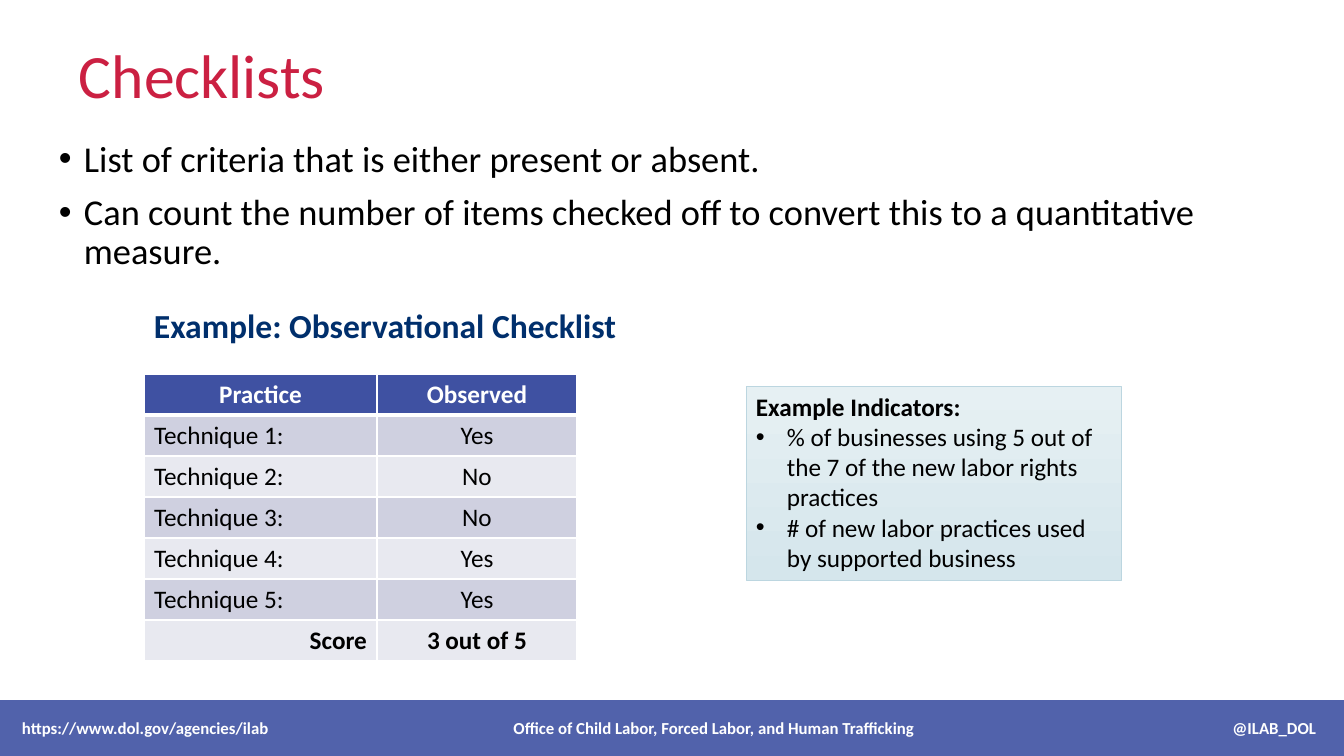
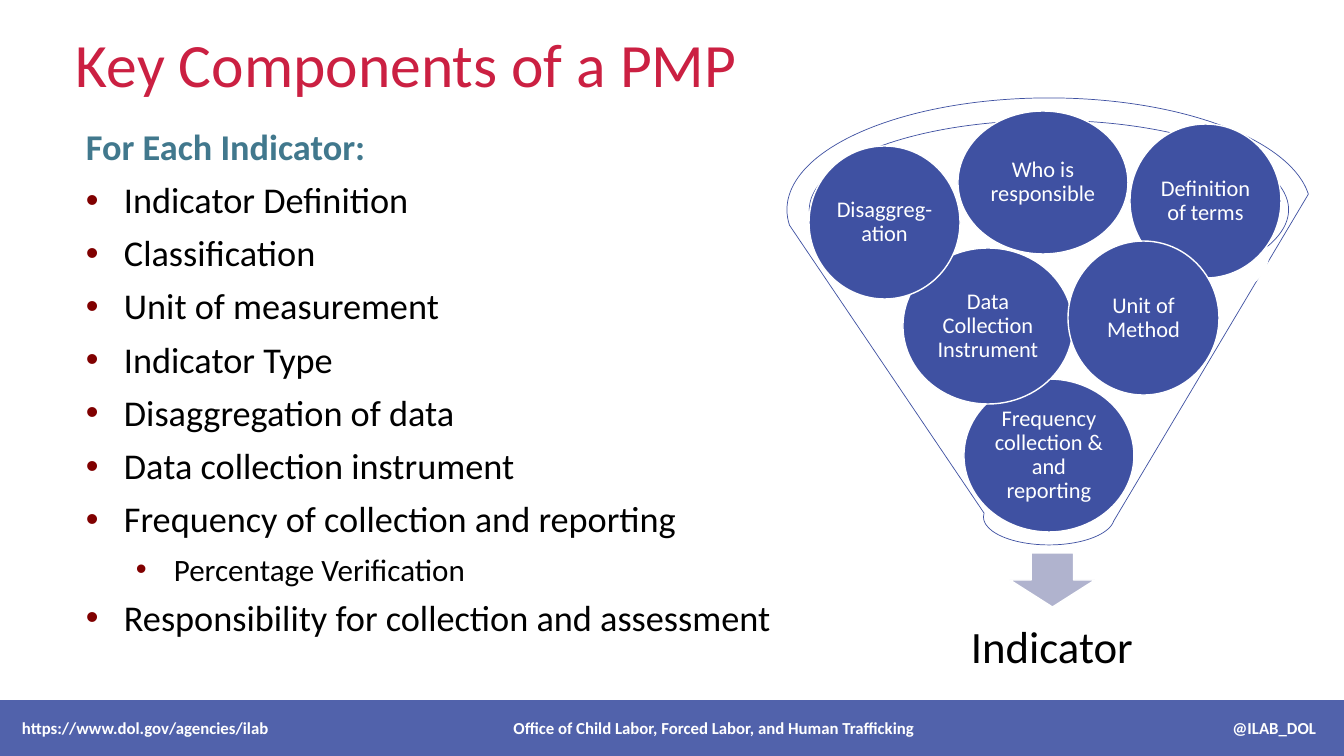
from dataclasses import dataclass

from lxml.etree import SubElement
from pptx import Presentation
from pptx.dml.color import RGBColor
from pptx.enum.shapes import MSO_SHAPE
from pptx.enum.text import MSO_ANCHOR, PP_ALIGN
from pptx.oxml.ns import qn
from pptx.util import Emu, Pt


@dataclass(frozen=True)
class Theme:
    font: str = "Calibri"
    red: str = "CB2042"
    navy: str = "002F6C"
    blue: str = "3F51A2"
    teal: str = "41788D"
    maroon: str = "800000"
    black: str = "000000"
    white: str = "FFFFFF"
    row_dark: str = "CFD0E0"
    row_light: str = "E8E9F0"
    arrow: str = "B0B3CE"
    callout_top: str = "E6F0F3"
    callout_bottom: str = "D5E6EC"
    callout_line: str = "BCD6E0"
    title: float = 44
    body: float = 26
    list_item: float = 25.9
    sub_item: float = 22.2
    heading: float = 24
    cell: float = 18
    circle: float = 16
    result: float = 32
    footer: float = 12


T = Theme()
PX = 914400 / 100.8
LEFT, CENTER, RIGHT = PP_ALIGN.LEFT, PP_ALIGN.CENTER, PP_ALIGN.RIGHT


def box(s, rect, kind=None, fill=None, line=None, width=1, anchor=MSO_ANCHOR.TOP):
    place = [Emu(round(v * PX)) for v in rect]
    if kind is None:
        sp = s.shapes.add_textbox(*place)
    else:
        sp = s.shapes.add_shape(kind, *place)
        sp.shadow.inherit = False
        if fill:
            sp.fill.solid()
            sp.fill.fore_color.rgb = RGBColor.from_string(fill)
        else:
            sp.fill.background()
        if line:
            sp.line.color.rgb = RGBColor.from_string(line)
            sp.line.width = Pt(width)
        else:
            sp.line.fill.background()
    sp.text_frame.word_wrap = True
    sp.text_frame.vertical_anchor = anchor
    return sp


def text(tf, value, size=T.cell, color=T.black, bold=False, align=LEFT,
         spacing=None, before=0, after=0, indent=0, hang=0, bullet=None):
    p = tf.paragraphs[0]
    if p.runs:
        p = tf.add_paragraph()
    p.alignment = align
    p.space_before, p.space_after = Pt(before), Pt(after)
    if spacing:
        p.line_spacing = spacing
    if bullet:
        pPr = p._p.get_or_add_pPr()
        pPr.set("marL", str(round(indent * PX)))
        pPr.set("indent", str(round(-hang * PX)))
        SubElement(SubElement(pPr, qn("a:buClr")), qn("a:srgbClr"), val=bullet)
        SubElement(pPr, qn("a:buFont"), typeface="Arial")
        SubElement(pPr, qn("a:buChar"), char="•")
    r = p.add_run()
    r.text = value
    r.font.name = T.font
    r.font.size = Pt(size)
    r.font.bold = bold
    r.font.color.rgb = RGBColor.from_string(color)


prs = Presentation()
prs.slide_width, prs.slide_height = Emu(round(1344 * PX)), Emu(round(756 * PX))

slides = []
for title, rect in [
    ("Checklists", (69, 11, 1166, 106)),
    ("Key Components of a PMP", (66, 0, 1131, 106)),
]:
    s = prs.slides.add_slide(prs.slide_layouts[6])
    slides.append(s)
    sp = box(s, rect, anchor=MSO_ANCHOR.BOTTOM)
    text(sp.text_frame, title, size=T.title, color=T.red, spacing=0.9)
    band = box(s, (0, 700, 1344, 56), MSO_SHAPE.RECTANGLE, T.blue)
    SubElement(next(band._element.spPr.iter(qn("a:srgbClr"))), qn("a:alpha"), val="90000")
    for value, left, width, align in [
        ("https://www.dol.gov/agencies/ilab", 12, 400, LEFT),
        ("Office of Child Labor, Forced Labor, and Human Trafficking", 464, 500, CENTER),
        ("@ILAB_DOL", 1026, 300, RIGHT),
    ]:
        sp = box(s, (left, 700, width, 56), anchor=MSO_ANCHOR.MIDDLE)
        text(sp.text_frame, value, size=T.footer, color=T.white, bold=True, align=align)

checklist, components = slides

sp = box(checklist, (49, 136, 1166, 170))
for value in [
    "List of criteria that is either present or absent.",
    "Can count the number of items checked off to convert this to a quantitative measure.",
]:
    text(sp.text_frame, value, size=T.body, spacing=0.9, before=10,
         indent=25, hang=25, bullet=T.black)

sp = box(checklist, (144, 300, 600, 50))
text(sp.text_frame, "Example: Observational Checklist", size=T.heading, color=T.navy, bold=True)

rows = [("Practice", "Observed"), ("Technique 1:", "Yes"), ("Technique 2:", "No"),
        ("Technique 3:", "No"), ("Technique 4:", "Yes"), ("Technique 5:", "Yes"),
        ("Score", "3 out of 5")]
frame = checklist.shapes.add_table(
    len(rows), 2, *[Emu(round(v * PX)) for v in (144, 374, 433, 41 * len(rows))])
table = frame.table
for column, width in zip(table.columns, (233, 200)):
    column.width = Emu(round(width * PX))
for i, values in enumerate(rows):
    table.rows[i].height = Emu(round(41 * PX))
    header, score = i == 0, i == len(rows) - 1
    fill = T.blue if header else T.row_dark if i % 2 else T.row_light
    for j, value in enumerate(values):
        cell = table.cell(i, j)
        align = CENTER if header or j else RIGHT if score else LEFT
        text(cell.text_frame, value, color=T.white if header else T.black,
             bold=header or score, align=align)
        tcPr = cell._tc.get_or_add_tcPr()
        for side in ("lnL", "lnR", "lnT", "lnB"):
            thick = (header and side == "lnB") or (i == 1 and side == "lnT")
            ln = SubElement(tcPr, qn("a:" + side), w=str(Pt(3 if thick else 1)))
            SubElement(SubElement(ln, qn("a:solidFill")), qn("a:srgbClr"), val=T.white)
        cell.fill.solid()
        cell.fill.fore_color.rgb = RGBColor.from_string(fill)

sp = box(checklist, (746, 386, 375, 194), MSO_SHAPE.RECTANGLE, line=T.callout_line, width=0.5)
sp.fill.gradient()
sp.fill.gradient_angle = 270
for stop, color in zip(sp.fill.gradient_stops, (T.callout_top, T.callout_bottom)):
    stop.color.rgb = RGBColor.from_string(color)
text(sp.text_frame, "Example Indicators:", bold=True)
for value in [
    "% of businesses using 5 out of the 7 of the new labor rights practices",
    "# of new labor practices used by supported business",
]:
    text(sp.text_frame, value, indent=31, hang=31, bullet=T.black)

sp = box(components, (76, 124, 737, 563))
text(sp.text_frame, "For Each Indicator:", size=T.list_item, color=T.teal, bold=True,
     spacing=0.9, after=10)
for value, level in [
    ("Indicator Definition", 0),
    ("Classification", 0),
    ("Unit of measurement", 0),
    ("Indicator Type", 0),
    ("Disaggregation of data", 0),
    ("Data collection instrument", 0),
    ("Frequency of collection and reporting", 0),
    ("Percentage Verification", 1),
    ("Responsibility for collection and assessment", 0),
]:
    text(sp.text_frame, value, size=T.sub_item if level else T.list_item, spacing=0.9,
         after=8.5 if level else 10, indent=38 + 50 * level, hang=38, bullet=T.maroon)

box(components, (787, 98, 524, 447), MSO_SHAPE.FUNNEL, T.white, T.blue, 0.5)
box(components, (835, 179, 434, 153), MSO_SHAPE.OVAL, T.white)
box(components, (1010, 553, 85, 54), MSO_SHAPE.DOWN_ARROW, T.arrow, T.white)
sp = box(components, (850, 597, 404, 103), anchor=MSO_ANCHOR.MIDDLE)
text(sp.text_frame, "Indicator", size=T.result, align=CENTER, spacing=0.9)

for value, rect in [
    ("Frequency collection & and reporting", (964, 379, 170, 153)),
    ("Data Collection Instrument", (903, 248, 170, 156)),
    ("Definition of terms", (1130, 124, 151, 154)),
    ("Unit of Method", (1068, 241, 151, 154)),
    ("Disaggreg-ation", (809, 146, 151, 153)),
    ("Who is responsible", (958, 111, 170, 143)),
]:
    sp = box(components, rect, MSO_SHAPE.OVAL, T.blue, T.white, anchor=MSO_ANCHOR.MIDDLE)
    tf = sp.text_frame
    tf.margin_left = tf.margin_right = Emu(round(3 * PX))
    tf.margin_top = tf.margin_bottom = 0
    text(tf, value, size=T.circle, color=T.white, align=CENTER, spacing=0.9)

prs.save("out.pptx")
